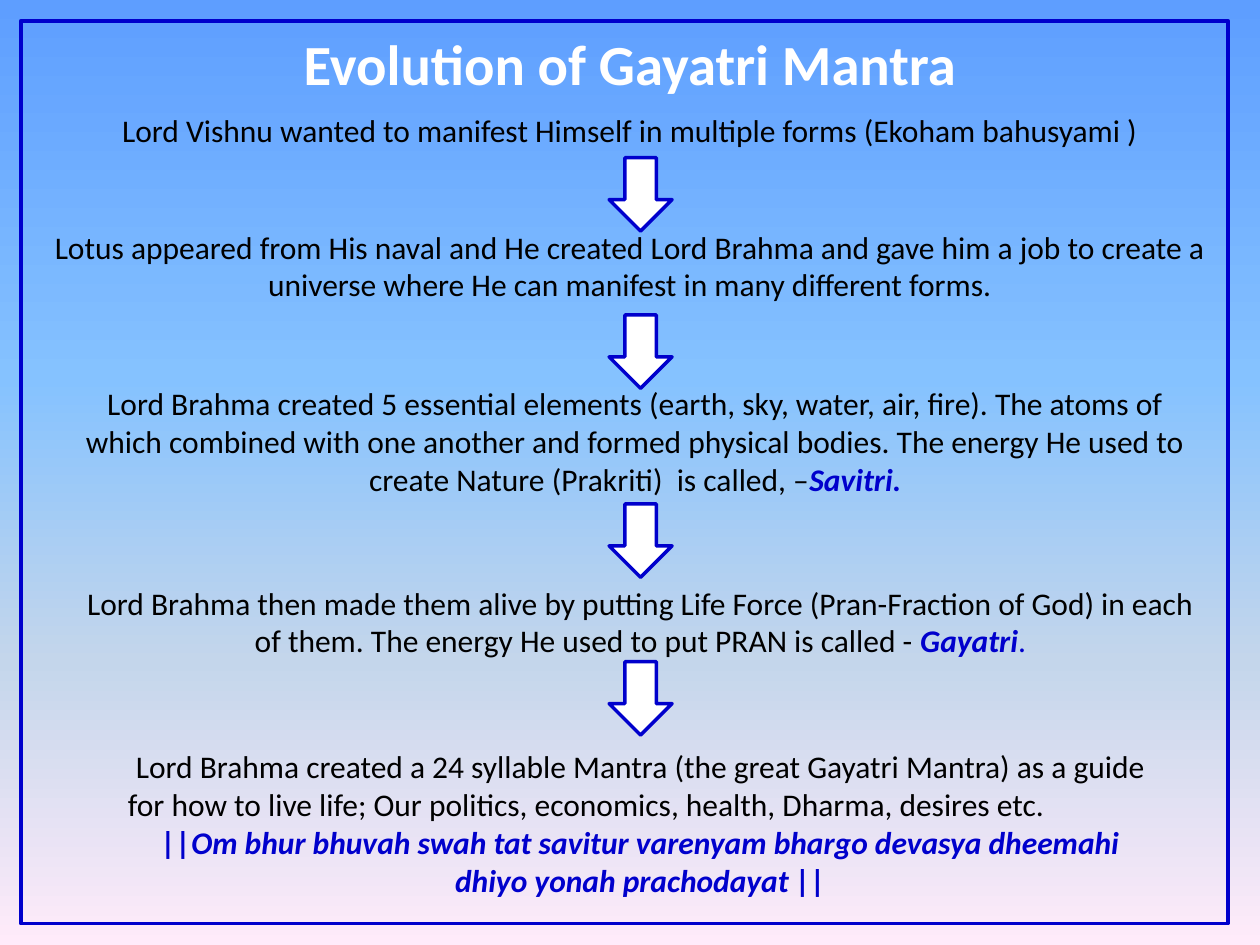
from typing import NamedTuple

from lxml.etree import SubElement
from pptx import Presentation
from pptx.dml.color import RGBColor
from pptx.enum.shapes import MSO_SHAPE as Preset
from pptx.enum.text import MSO_ANCHOR as Anchor, MSO_AUTO_SIZE as AutoSize, PP_ALIGN as Align
from pptx.oxml.ns import qn
from pptx.util import Cm, Pt

COLORS = {"ink": "000000", "accent": "0000CC", "white": "FFFFFF"}
SKY = {0: "5E9EFF", 40: "85C2FF", 70: "C4D6EB", 100: "FFEBFA"}
FONT = "Calibri"


class Box(NamedTuple):
    left: float
    top: float
    width: float
    height: float

    def lengths(self) -> list:
        return [Cm(value) for value in self]


class Line(NamedTuple):
    plain: str = ""
    strong: str = ""
    tail: str = ""
    align: Align = Align.CENTER


class Stage(NamedTuple):
    box: Box
    lines: list[Line]
    arrow_top: float | None = None
    anchor: Anchor = Anchor.TOP


STAGES = [
    Stage(Box(1.06, 2.12, 23.28, 1.02), [
        Line("Lord Vishnu wanted to manifest Himself in multiple forms (Ekoham bahusyami )"),
    ], 3.18),
    Stage(Box(0, 4.45, 25.4, 1.8), [
        Line("Lotus appeared from His naval and He created Lord Brahma and gave him a job "
             "to create a universe where He can manifest in many different forms."),
    ], 6.35, Anchor.MIDDLE),
    Stage(Box(1.48, 7.62, 22.65, 3.33), [
        Line("Lord Brahma created 5 essential elements (earth, sky, water, air, fire). "
             "The atoms of which combined with one another and formed physical bodies. "
             "The energy He used to create Nature (Prakriti)  is called, –", "Savitri."),
    ], 10.16),
    Stage(Box(1.48, 11.64, 22.86, 2.57), [
        Line("Lord Brahma then made them alive by putting Life Force (Pran-Fraction of God) "
             "in each of them. The energy He used to put PRAN is called - ", "Gayatri", "."),
    ], 13.34),
    Stage(Box(2.33, 14.94, 21.17, 4.12), [
        Line("Lord Brahma created a 24 syllable Mantra (the great Gayatri Mantra) as a guide"),
        Line("for how to live life; Our politics, economics, health, Dharma, desires etc.",
             align=Align.LEFT),
        Line(strong="||Om bhur bhuvah swah tat savitur varenyam bhargo devasya dheemahi "
                    "dhiyo yonah prachodayat ||"),
    ]),
]


def add_text(paragraph, text: str, *, color: str = "ink", size: float = 18,
             bold: bool = False, italic: bool = False) -> None:
    if not text:
        return
    run = paragraph.add_run()
    run.text = text
    font = run.font
    font.name, font.size, font.bold, font.italic = FONT, Pt(size), bold, italic
    font.color.rgb = RGBColor.from_string(COLORS[color])


def paint_sky(slide) -> None:
    fill = slide.background.fill
    fill.gradient()
    fill.gradient_angle = 270
    stops = slide.element.find(".//" + qn("a:gsLst"))
    for old in list(stops):
        stops.remove(old)
    for percent, color in SKY.items():
        stop = SubElement(stops, qn("a:gs"), pos=str(percent * 1000))
        SubElement(stop, qn("a:srgbClr"), val=color)


def add_title(slide, box: Box, text: str) -> None:
    title = slide.shapes.title
    title.left, title.top, title.width, title.height = box.lengths()
    frame = title.text_frame
    frame.auto_size = AutoSize.NONE
    frame.vertical_anchor = Anchor.MIDDLE
    paragraph = frame.paragraphs[0]
    paragraph.alignment = Align.CENTER
    add_text(paragraph, text, color="white", size=32.4, bold=True)


def add_outlined(slide, preset: Preset, box: Box, fill: str | None = None) -> None:
    shape = slide.shapes.add_shape(preset, *box.lengths())
    shape.shadow.inherit = False
    if fill:
        shape.fill.solid()
        shape.fill.fore_color.rgb = RGBColor.from_string(COLORS[fill])
    else:
        shape.fill.background()
    shape.line.color.rgb = RGBColor.from_string(COLORS["accent"])
    shape.line.width = Pt(2)


def add_stage(slide, stage: Stage) -> None:
    frame = slide.shapes.add_textbox(*stage.box.lengths()).text_frame
    frame.word_wrap = True
    frame.auto_size = AutoSize.SHAPE_TO_FIT_TEXT
    frame.vertical_anchor = stage.anchor
    for index, line in enumerate(stage.lines):
        paragraph = frame.add_paragraph() if index else frame.paragraphs[0]
        paragraph.alignment = line.align
        add_text(paragraph, line.plain)
        add_text(paragraph, line.strong, color="accent", bold=True, italic=True)
        add_text(paragraph, line.tail, color="accent")
    if stage.arrow_top is not None:
        add_outlined(slide, Preset.DOWN_ARROW, Box(12.28, stage.arrow_top, 1.27, 1.48), "white")


def main() -> None:
    deck = Presentation()
    deck.slide_width, deck.slide_height = Cm(25.4), Cm(19.05)
    slide = deck.slides.add_slide(deck.slide_layouts[5])
    paint_sky(slide)
    add_title(slide, Box(1.27, 0.42, 22.86, 1.7), "Evolution of Gayatri Mantra")
    for stage in STAGES:
        add_stage(slide, stage)
    add_outlined(slide, Preset.RECTANGLE, Box(0.42, 0.42, 24.34, 18.2))
    deck.save("out.pptx")


if __name__ == "__main__":
    main()
